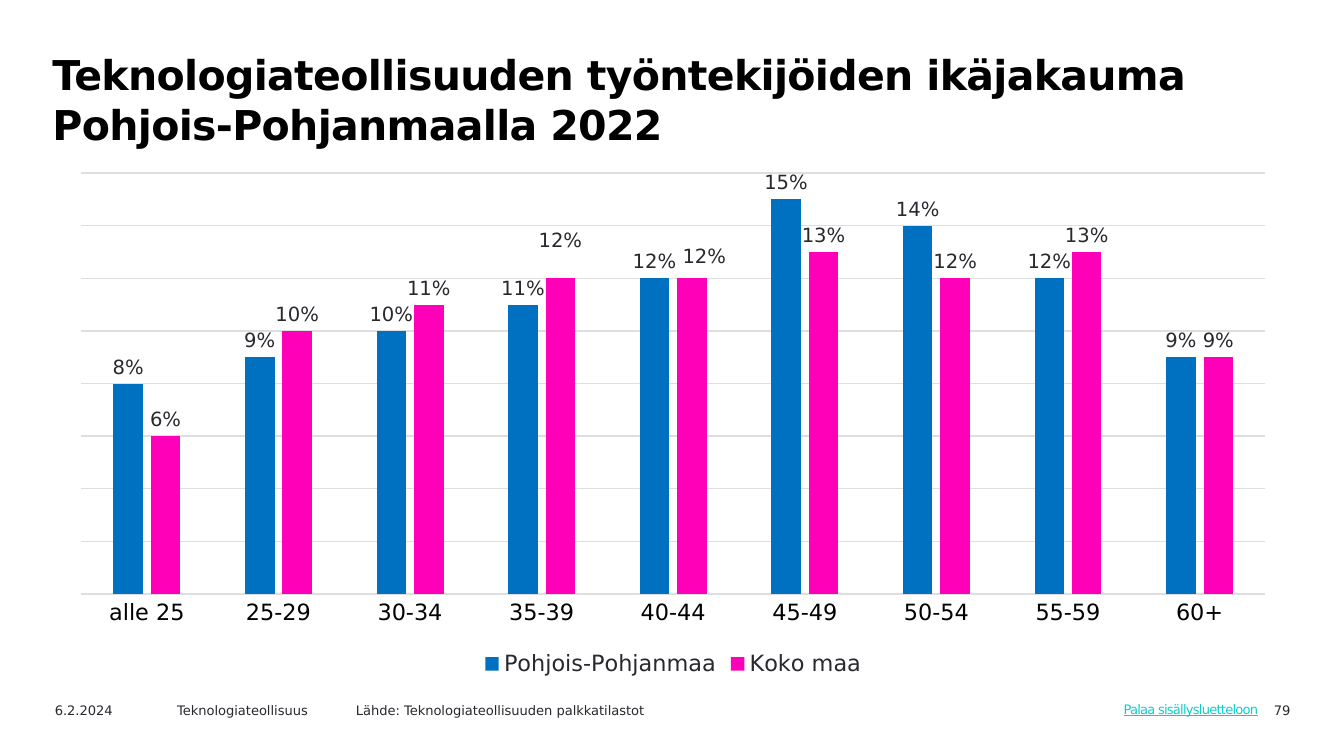
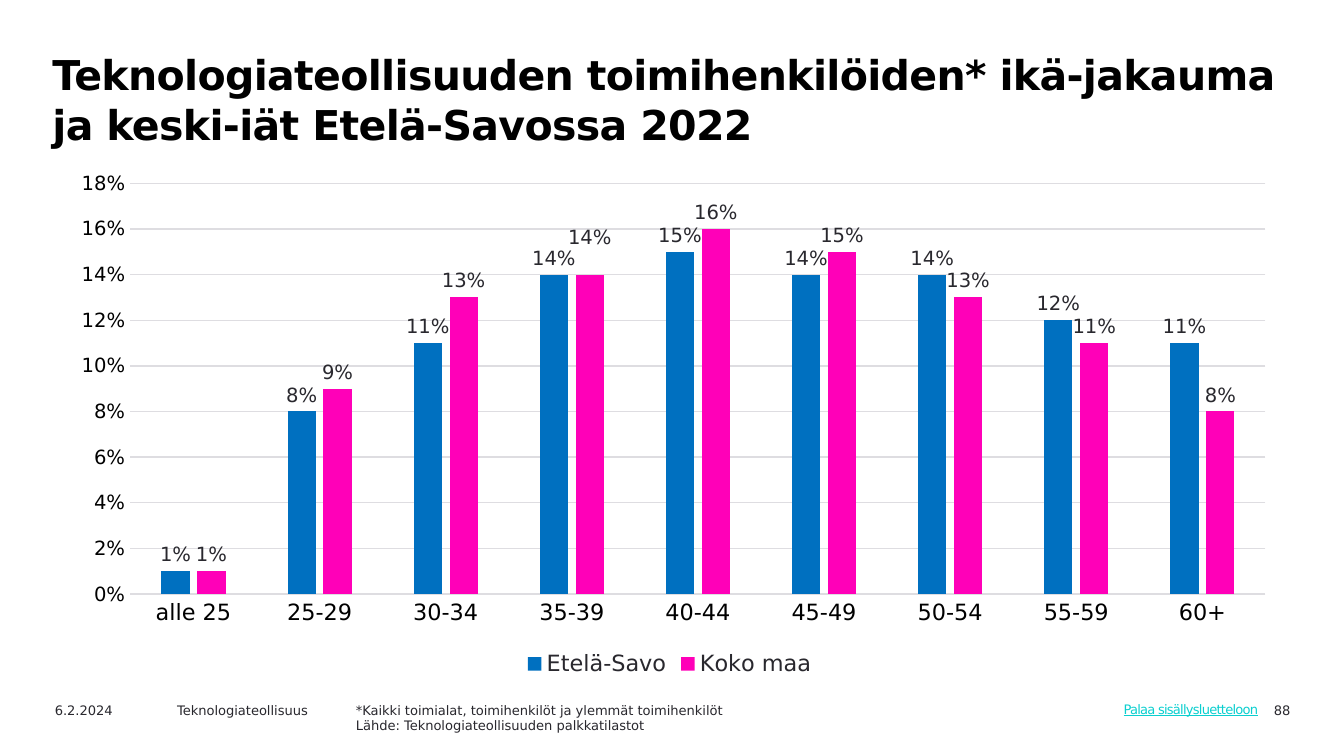
from lxml import etree
from pptx import Presentation
from pptx.chart.data import CategoryChartData
from pptx.dml.color import RGBColor
from pptx.enum.chart import (XL_CHART_TYPE, XL_LABEL_POSITION,
                             XL_LEGEND_POSITION, XL_TICK_MARK)
from pptx.enum.text import MSO_ANCHOR, MSO_AUTO_SIZE, PP_ALIGN
from pptx.oxml.ns import qn
from pptx.util import Inches, Pt

CLUSTERED = XL_CHART_TYPE.COLUMN_CLUSTERED
OUTSIDE_END = XL_LABEL_POSITION.OUTSIDE_END
LEGEND_BOTTOM = XL_LEGEND_POSITION.BOTTOM
NO_TICK = XL_TICK_MARK.NONE
TOP = MSO_ANCHOR.TOP
NO_FIT = MSO_AUTO_SIZE.NONE
GROW = MSO_AUTO_SIZE.SHAPE_TO_FIT_TEXT
LEFT, RIGHT = PP_ALIGN.LEFT, PP_ALIGN.RIGHT

FONT = "DejaVu Sans"
BLACK = RGBColor(0x00, 0x00, 0x00)
INK = RGBColor(0x29, 0x28, 0x2E)
GRID = RGBColor(0xDE, 0xDD, 0xE1)
REGION_BLUE = RGBColor(0x00, 0x70, 0xC0)
COUNTRY_PINK = RGBColor(0xFF, 0x00, 0xB8)
LINK_TEAL = RGBColor(0x0A, 0xCF, 0xCF)

SLIDE_WIDTH = Inches(10)
SLIDE_HEIGHT = SLIDE_WIDTH * 9 // 16
FOOTER_TOP, FOOTER_HEIGHT = 92, 3.2

AGE_GROUPS = ["alle 25", "25-29", "30-34", "35-39", "40-44",
              "45-49", "50-54", "55-59", "60+"]
SOURCE = "Lähde: Teknologiateollisuuden palkkatilastot"


def percent_box(left, top, width, height):
    """Turn percentages of the slide's width and height into lengths."""
    return (int(SLIDE_WIDTH * left / 100), int(SLIDE_HEIGHT * top / 100),
            int(SLIDE_WIDTH * width / 100), int(SLIDE_HEIGHT * height / 100))


def style_font(font, size, color=INK, bold=False):
    font.name = FONT
    font.size = Pt(size)
    font.bold = bold
    font.color.rgb = color


def track_letters(run, hundredths):
    """Set letter spacing in hundredths of a point."""
    run._r.get_or_add_rPr().set("spc", str(hundredths))


def add_title(slide, text):
    title = slide.shapes.title
    title.left, title.top, title.width, title.height = percent_box(
        2.7, 5.5, 93.4, 18.9)
    frame = title.text_frame
    frame.text = text
    frame.word_wrap = True
    frame.auto_size = NO_FIT
    frame.vertical_anchor = TOP
    paragraph = frame.paragraphs[0]
    paragraph.alignment = LEFT
    paragraph.line_spacing = Pt(27)
    paragraph._p.get_or_add_pPr().set("marL", str(Inches(0.02)))
    run = paragraph.runs[0]
    style_font(run.font, 22, BLACK, bold=True)
    track_letters(run, -35)


def add_small_text(slide, text, left, width, top=FOOTER_TOP,
                   height=FOOTER_HEIGHT, alignment=LEFT, color=INK):
    box = slide.shapes.add_textbox(*percent_box(left, top, width, height))
    frame = box.text_frame
    frame.word_wrap = True
    frame.text = text
    for paragraph in frame.paragraphs:
        paragraph.alignment = alignment
        for run in paragraph.runs:
            style_font(run.font, 7, color)
    return frame


def add_contents_label(slide):
    frame = add_small_text(slide, "Palaa sisällysluetteloon", 83.2, 12.2,
                           top=92.1, height=3.6, color=LINK_TEAL)
    frame.auto_size = GROW
    frame.margin_left = frame.margin_right = Inches(0.04)
    frame.margin_top = frame.margin_bottom = Inches(0.04)
    run = frame.paragraphs[0].runs[0]
    run.font.underline = True
    track_letters(run, -40)


def add_footer(slide, number, source):
    add_small_text(slide, str(number), 87.6, 9.4, alignment=RIGHT)
    add_small_text(slide, "6.2.2024", 3.1, 10)
    add_small_text(slide, "Teknologiateollisuus", 12.2, 14.2)
    add_small_text(slide, source, 25.5, 34.7, height=5.7)
    add_contents_label(slide)


def manual_layout(**settings):
    """Build a c:layout element from its manual settings, in order."""
    layout = etree.Element(qn("c:layout"))
    manual = etree.SubElement(layout, qn("c:manualLayout"))
    for name, value in settings.items():
        etree.SubElement(manual, qn("c:" + name)).set("val", str(value))
    return layout


def set_plot_area(chart, left, top, width, height):
    """Fix the inner plot area, in shares of the chart."""
    plot_area = chart._chartSpace.chart.plotArea
    for old_layout in plot_area.findall(qn("c:layout")):
        plot_area.remove(old_layout)
    plot_area.insert(0, manual_layout(
        layoutTarget="inner", xMode="edge", yMode="edge",
        x=left, y=top, w=width, h=height))


def shift_label(series, index, right, down):
    """Move one data label, in shares of the chart."""
    label = series.points[index].data_label
    style_font(label.font, 10.5)
    label.position = OUTSIDE_END
    for mark in series._element.iter(qn("c:dLbl")):
        position = mark.find(qn("c:idx"))
        if position.get("val") == str(index):
            position.addnext(manual_layout(x=right, y=down))


def style_series(series, color):
    series.format.fill.solid()
    series.format.fill.fore_color.rgb = color
    series.invert_if_negative = False
    labels = series.data_labels
    labels.show_value = True
    labels.number_format = "0%"
    labels.number_format_is_linked = False
    labels.position = OUTSIDE_END
    style_font(labels.font, 10.5)
    for leader_lines in series._element.iter(qn("c:showLeaderLines")):
        leader_lines.set("val", "0")


def style_line(line):
    line.color.rgb = GRID
    line.width = Pt(0.75)


def style_axes(chart, maximum, show_values):
    ages = chart.category_axis
    ages.major_tick_mark = ages.minor_tick_mark = NO_TICK
    style_font(ages.tick_labels.font, 12, BLACK)
    style_line(ages.format.line)

    shares = chart.value_axis
    shares.minimum_scale, shares.maximum_scale = 0, maximum
    shares.major_unit = 0.02
    shares.major_tick_mark = shares.minor_tick_mark = NO_TICK
    shares.tick_labels.number_format = "0%"
    shares.tick_labels.number_format_is_linked = False
    style_font(shares.tick_labels.font, 10.5, BLACK)
    shares.format.line.fill.background()
    shares.has_major_gridlines = True
    style_line(shares.major_gridlines.format.line)
    shares.visible = show_values


def add_age_chart(slide, shares_by_area, maximum, show_values, plot_area,
                  label_shifts):
    data = CategoryChartData(number_format="0%")
    data.categories = AGE_GROUPS
    for area, percents in shares_by_area.items():
        data.add_series(area, [percent / 100 for percent in percents])
    chart = slide.shapes.add_chart(
        CLUSTERED, *percent_box(4.2, 21.5, 91.8, 68.8), data).chart
    style_font(chart.font, 10)
    chart.has_title = False
    chart.has_legend = True
    chart.legend.position = LEGEND_BOTTOM
    chart.legend.include_in_layout = False
    style_font(chart.legend.font, 12)

    plot = chart.plots[0]
    plot.gap_width, plot.overlap = 219, -27
    plot.vary_by_categories = False
    for series, color in zip(plot.series, (REGION_BLUE, COUNTRY_PINK)):
        style_series(series, color)
    for index, (right, down) in label_shifts.items():
        shift_label(plot.series[1], index, right, down)
    style_axes(chart, maximum, show_values)
    set_plot_area(chart, *plot_area)


def add_age_slide(presentation, title, number, source, **chart_settings):
    slide = presentation.slides.add_slide(presentation.slide_layouts[5])
    add_title(slide, title)
    add_age_chart(slide, **chart_settings)
    add_footer(slide, number, source)


def main():
    presentation = Presentation()
    presentation.slide_width = SLIDE_WIDTH
    presentation.slide_height = SLIDE_HEIGHT
    add_age_slide(
        presentation,
        "Teknologiateollisuuden työntekijöiden ikäjakauma "
        "Pohjois-Pohjanmaalla 2022",
        79, SOURCE,
        shares_by_area={
            "Pohjois-Pohjanmaa": [8, 9, 10, 11, 12, 15, 14, 12, 9],
            "Koko maa": [6, 10, 11, 12, 12, 13, 12, 13, 9]},
        maximum=0.16, show_values=False,
        plot_area=(0.02, 0.02, 0.96, 0.81),
        label_shifts={3: (0, -0.04), 4: (0.01, -0.01)})
    add_age_slide(
        presentation,
        "Teknologiateollisuuden toimihenkilöiden* ikä-jakauma "
        "ja keski-iät Etelä-Savossa 2022",
        88,
        "*Kaikki toimialat, toimihenkilöt ja ylemmät toimihenkilöt\n" + SOURCE,
        shares_by_area={
            "Etelä-Savo": [1, 8, 11, 14, 15, 14, 14, 12, 11],
            "Koko maa ": [1, 9, 13, 14, 16, 15, 13, 11, 8]},
        maximum=0.18, show_values=True,
        plot_area=(0.06, 0.04, 0.92, 0.79),
        label_shifts={3: (0, -0.04)})
    presentation.save("out.pptx")


if __name__ == "__main__":
    main()
